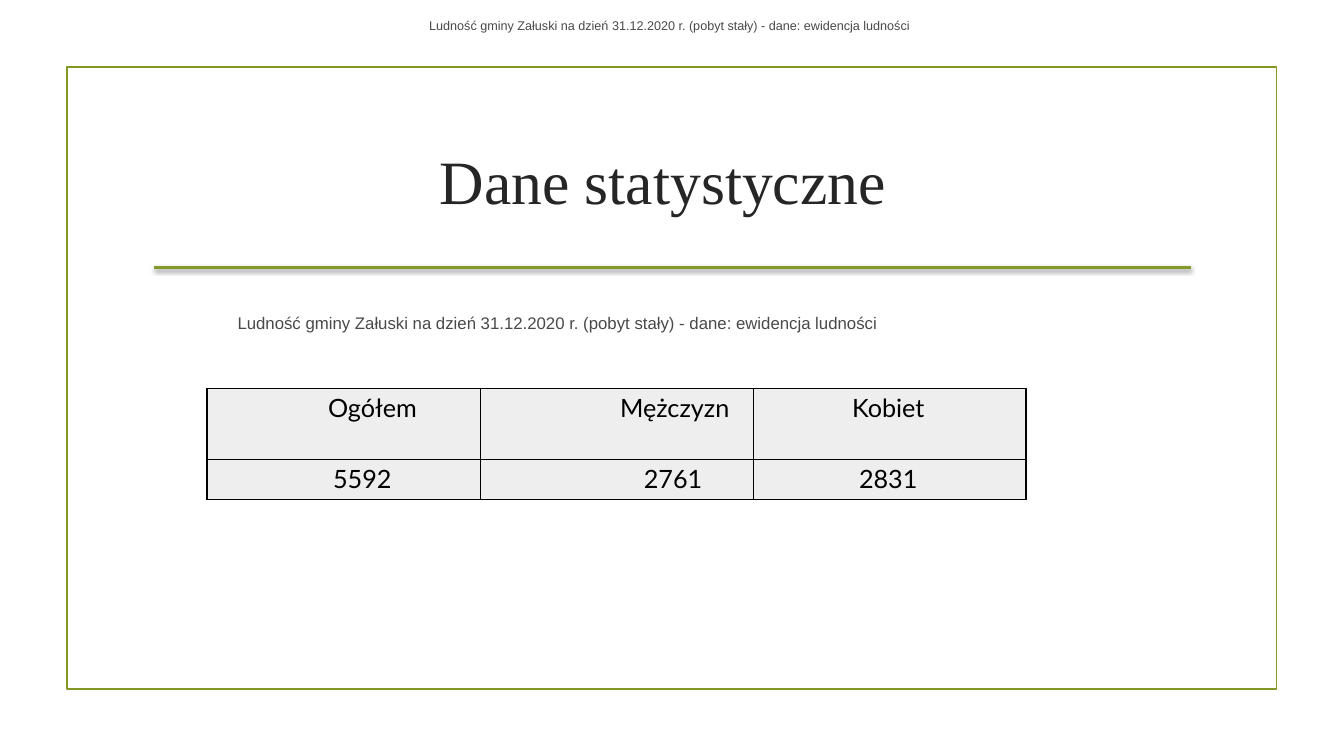
from lxml.etree import SubElement
from pptx import Presentation
from pptx.dml.color import RGBColor
from pptx.enum.shapes import MSO_CONNECTOR, MSO_SHAPE
from pptx.enum.text import MSO_ANCHOR, PP_ALIGN
from pptx.oxml import parse_xml
from pptx.oxml.ns import nsdecls, qn
from pptx.util import Pt

FRAME = RGBColor(0x82, 0x98, 0x26)
RULE = RGBColor(0x83, 0x99, 0x2A)
DARK = RGBColor(0x26, 0x26, 0x26)
GRAY = RGBColor(0x49, 0x49, 0x49)
PALE = RGBColor(0xEE, 0xEE, 0xEE)
BLACK = RGBColor(0, 0, 0)


def style(para, name, size, color):
    for run in para.runs:
        run.font.name = name
        run.font.size = Pt(size)
        run.font.color.rgb = color


def border(cell, side, width):
    line = SubElement(cell._tc.get_or_add_tcPr(), qn("a:" + side), w=str(Pt(width)))
    fill = SubElement(line, qn("a:solidFill"))
    SubElement(fill, qn("a:srgbClr"), val=str(BLACK))


deck = Presentation()
deck.slide_width = Pt(960)
deck.slide_height = Pt(540)
slide = deck.slides.add_slide(deck.slide_layouts[5])
shapes = slide.shapes

frame = shapes.add_shape(MSO_SHAPE.RECTANGLE, Pt(47.8), Pt(48), Pt(864), Pt(444))
frame.shadow.inherit = False
frame.fill.background()
frame.line.color.rgb = FRAME
frame.line.width = Pt(1.25)

rule = shapes.add_connector(MSO_CONNECTOR.STRAIGHT, Pt(110), Pt(191), Pt(850.5), Pt(191))
rule.line.color.rgb = RULE
rule.line.width = Pt(2)
rule._element.spPr.append(parse_xml(
    f'<a:effectLst {nsdecls("a")}>'
    f'<a:outerShdw blurRad="{Pt(3.1)}" dist="{Pt(1.6)}" dir="5400000" rotWithShape="0">'
    '<a:srgbClr val="000000"><a:alpha val="38000"/></a:srgbClr>'
    '</a:outerShdw></a:effectLst>'))

title = shapes.title
title.left, title.top, title.width, title.height = Pt(102), Pt(77), Pt(756), Pt(103)
title.text_frame.text = "Dane statystyczne"
title.text_frame.vertical_anchor = MSO_ANCHOR.MIDDLE
title.text_frame.margin_right = Pt(20)
head = title.text_frame.paragraphs[0]
head.alignment = PP_ALIGN.CENTER
style(head, "Times New Roman", 44, DARK)

note = "Ludność gminy Załuski na dzień 31.12.2020 r. (pobyt stały) - dane: ewidencja ludności"
for left, top, width, height, size, wrap in [
    (299.5, 8.9, 361, 18, 9, False),
    (162.6, 219.8, 762, 21.6, 12, True),
]:
    box = shapes.add_textbox(Pt(left), Pt(top), Pt(width), Pt(height))
    box.text_frame.word_wrap = wrap
    box.text_frame.vertical_anchor = MSO_ANCHOR.MIDDLE
    box.text_frame.text = note
    style(box.text_frame.paragraphs[0], "Arial", size, GRAY)

rows = [
    (50.7, [("Ogółem", 86.4), ("Mężczyzn", 100), ("Kobiet", 70.7)]),
    (28.6, [("5592", 90), ("2761", 117), ("2831", 75.7)]),
]
table = shapes.add_table(2, 3, Pt(147.9), Pt(277.2), Pt(585), Pt(79.3)).table
table.first_row = False
table.horz_banding = False
for col in table.columns:
    col.width = Pt(195)
for r, (height, items) in enumerate(rows):
    table.rows[r].height = Pt(height)
    for c, (text, inset) in enumerate(items):
        cell = table.cell(r, c)
        cell.text_frame.text = text
        cell.margin_left = Pt(inset)
        cell.margin_top = cell.margin_bottom = Pt(3.5)
        style(cell.text_frame.paragraphs[0], "Lato", 18, BLACK)
        border(cell, "lnL", 1.5 if c == 0 else 0.75)
        border(cell, "lnR", 1.5 if c == 2 else 0.75)
        border(cell, "lnT", 0.75)
        border(cell, "lnB", 0.75)
        cell.fill.solid()
        cell.fill.fore_color.rgb = PALE

deck.save("out.pptx")
